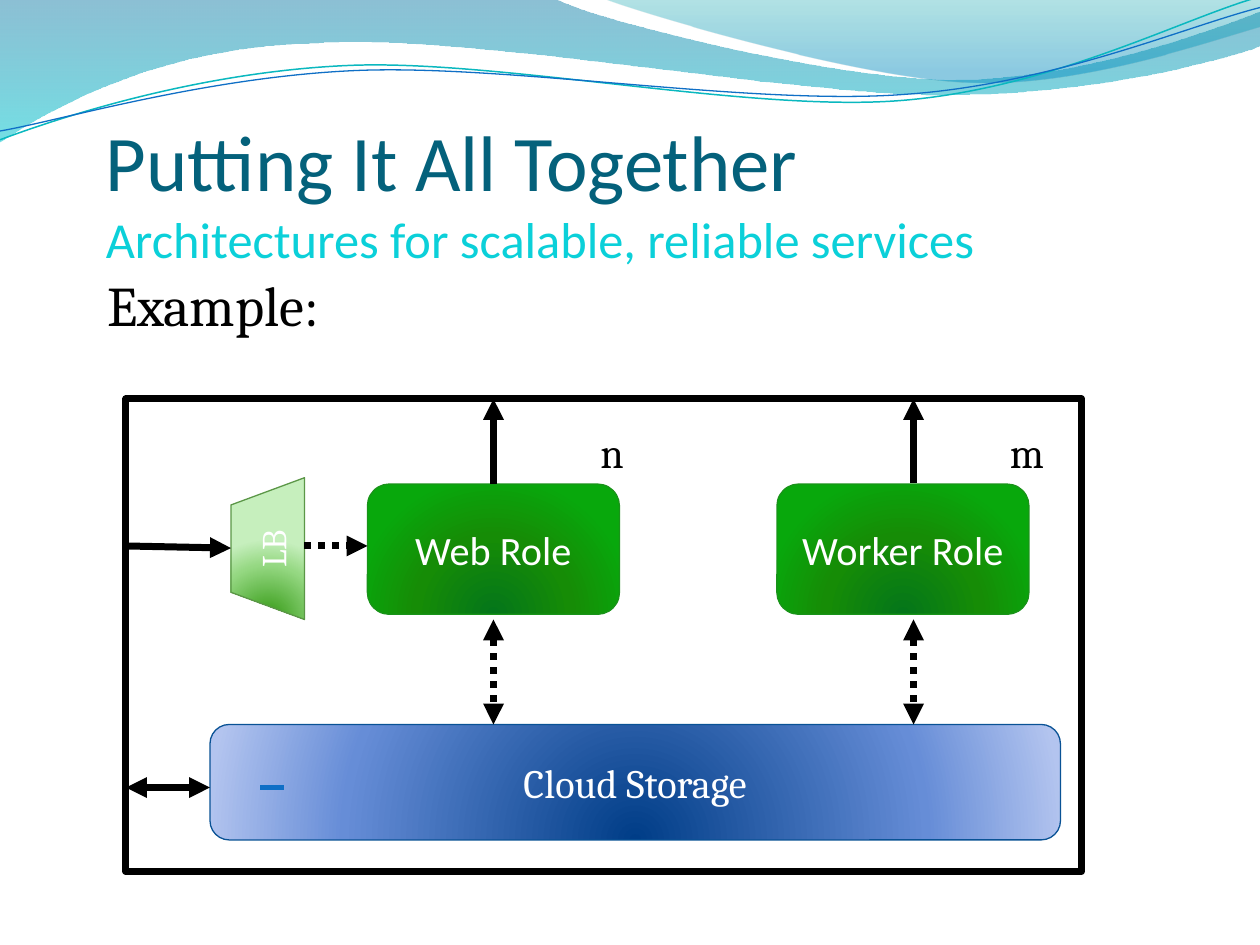
"""Build the slide on an architecture for scalable, reliable cloud services."""
from dataclasses import dataclass
from typing import Optional

import lxml.etree
import pptx
import pptx.dml.color
import pptx.enum.dml
import pptx.enum.shapes
import pptx.enum.text
import pptx.oxml
import pptx.oxml.ns
import pptx.util

Shape = pptx.enum.shapes.MSO_SHAPE
Align = pptx.enum.text.PP_ALIGN
Anchor = pptx.enum.text.MSO_ANCHOR
qn = pptx.oxml.ns.qn

COLUMNS, ROWS = 120, 90
CELL = pptx.util.Inches(10) // COLUMNS
PERCENT = pptx.util.Inches(10) // 100
COLORS = {
    "title": "04617B", "subtitle": "0BD0D9", "black": "000000", "white": "FFFFFF",
    "teal line": "0AB8BF", "blue line": "0F6FC6",
    "storage line": "095295", "role line": "199319", "balancer line": "5B9747",
}
GRADIENTS = {
    "storage": [(0, "003D87", 100), (68, "668DD7", 100), (100, "B3C4EF", 100)],
    "role": [(0, "04761A", 100), (55, "168C06", 100), (100, "08A80C", 100)],
    "balancer": [(0, "319811", 100), (68, "95D882", 100), (100, "C6EFBD", 100)],
    "wide wave": [(0, "0074A1", 45), (100, "00C6CF", 55)],
    "right wave": [(0, "00A1A9", 30), (80, "008BBF", 45)],
}
DOWNWARD = '<a:lin ang="5400000" scaled="0"/>'
FROM_BELOW = ('<a:path path="circle"><a:fillToRect l="50000" t="130000" '
              'r="50000" b="-30000"/></a:path>')


@dataclass
class Block:
    """A labelled block, placed in grid cells."""
    text: str
    kind: str
    preset: Shape
    place: tuple
    font: str = "Cambria"
    size: float = 23
    turn: float = 0


@dataclass
class Arrow:
    """A line between two grid points, with optional heads and a join at its end."""
    start: tuple
    end: tuple
    head: bool = False
    tail: bool = False
    dotted: bool = False
    color: str = "black"
    width: float = 4
    joint: Optional[tuple] = None


@dataclass
class Wave:
    """An outline of straight and cubic steps, in percent of the slide width."""
    start: tuple
    steps: list
    gradient: str = ""
    color: str = ""
    width: float = 0.75


WAVES = [
    Wave((0, 0), [[(44, -0.1)], [(47.6, 1.7), (66.4, 6.3), (75.8, 6.3)],
                  [(85.3, 6.3), (95.8, 2.6), (100, 0.9)], [(100.1, 3.6)],
                  [(98.3, 4.4), (87, 7.6), (74.6, 7.5)],
                  [(62.2, 7.5), (38.2, 2.8), (25.7, 3.4)],
                  [(12.9, 3.6), (4.6, 8.3), (-0.1, 11.3)]], gradient="wide wave"),
    Wave((47.9, -0.1), [[(50.9, 1.1), (68.2, 6.2), (76.9, 6.5)],
                        [(85.6, 6.9), (96.1, 3.2), (100, 2.1)], [(100, 0)]],
         gradient="right wave"),
    Wave((0, 11.1), [[(4.8, 9.3), (15.8, 5.7), (27.7, 5.2)],
                     [(39.5, 4.7), (59.3, 8.9), (71.3, 8)],
                     [(83.3, 7.1), (93.8, 1.5), (99.8, -0.2)]], color="teal line", width=0.85),
    Wave((0, 10.4), [[(4.7, 9.6), (16.4, 6.1), (28.3, 5.6)],
                     [(40.3, 5.1), (59.7, 8.4), (71.7, 7.5)],
                     [(83.6, 6.7), (94.1, 2.1), (100, 0.6)]], color="blue line"),
]
BLOCKS = [
    Block("Cloud Storage", "storage", Shape.ROUNDED_RECTANGLE, (20, 69, 81, 11)),
    Block("Web Role", "role", Shape.ROUNDED_RECTANGLE, (35, 46.1, 24, 12.4), "Calibri"),
    Block("LB", "balancer", Shape.TRAPEZOID, (18.75, 48.75, 13.5, 7), size=20, turn=270),
    Block("Worker Role", "role", Shape.ROUNDED_RECTANGLE, (74, 46.1, 24, 12.4), "Calibri"),
]
COUNTS = {"n": (56, 40, 4, 6), "m": (95, 40, 4, 6)}
ROLE_COLUMNS = (47, 87)
ARROWS = [
    Arrow((24.8, 75), (27, 75), color="blue line", width=3),
    Arrow((29, 52), (35, 52), tail=True, dotted=True),
    Arrow((20, 75), (12, 75), head=True, tail=True),
    Arrow((22, 52.2), (12, 52), head=True),
    *[Arrow((column, 59), (column, 69), head=True, tail=True, dotted=True)
      for column in ROLE_COLUMNS],
    Arrow((47, 38), (47, 46), head=True, joint=("Web Role", 0)),
    Arrow((87, 38), (87, 46), head=True),
]


def cells(values: tuple) -> list:
    """Turn grid cells into lengths."""
    return [pptx.util.Emu(round(value * CELL)) for value in values]


def rgb(name: str) -> pptx.dml.color.RGBColor:
    """Look up a named colour."""
    return pptx.dml.color.RGBColor.from_string(COLORS[name])


def style_font(font, name: str, size: float, color: str) -> None:
    """Set the typeface, size and colour of a font."""
    font.name, font.size = name, pptx.util.Pt(size)
    font.color.rgb = rgb(color)


def style_line(line, color: str, width: float) -> None:
    """Set the colour and width of a line."""
    line.color.rgb = rgb(color)
    line.width = pptx.util.Pt(width)


def fill_gradient(shape, name: str, direction: str) -> None:
    """Fill a shape with a named gradient."""
    shape.fill.gradient()
    stops = "".join(
        f'<a:gs pos="{place * 1000}"><a:srgbClr val="{color}">'
        f'<a:alpha val="{alpha * 1000}"/></a:srgbClr></a:gs>'
        for place, color, alpha in GRADIENTS[name])
    gradient = pptx.oxml.parse_xml(
        f'<a:gradFill {pptx.oxml.ns.nsdecls("a")} rotWithShape="0">'
        f'<a:gsLst>{stops}</a:gsLst>{direction}</a:gradFill>')
    properties = shape._element.spPr
    properties.replace(properties.find(qn("a:gradFill")), gradient)


def bend_steps(shape, steps: list) -> None:
    """Turn each three-point step of an outline into one cubic curve."""
    segments = iter(list(shape._element.iter(qn("a:lnTo"))))
    for step in steps:
        first, *others = [next(segments) for _ in step]
        if others:
            curve = lxml.etree.Element(qn("a:cubicBezTo"))
            first.addprevious(curve)
            for segment in (first, *others):
                curve.append(segment[0])
                segment.getparent().remove(segment)


def draw_wave(page, wave: Wave) -> None:
    """Draw one wave of the header."""
    points = [wave.start, *(point for step in wave.steps for point in step)]
    (left, top), *others = [(round(x * PERCENT), round(y * PERCENT)) for x, y in points]
    builder = page.shapes.build_freeform(left, top, scale=1.0)
    builder.add_line_segments(others, close=bool(wave.gradient))
    shape = builder.convert_to_shape()
    bend_steps(shape, wave.steps)
    shape.shadow.inherit = False
    if wave.gradient:
        fill_gradient(shape, wave.gradient, DOWNWARD)
        shape.line.fill.background()
    else:
        shape.fill.background()
        style_line(shape.line, wave.color, wave.width)


def draw_block(page, block: Block):
    """Draw a block with its centred label."""
    shape = page.shapes.add_shape(block.preset, *cells(block.place))
    shape.shadow.inherit = False
    shape.rotation = block.turn
    if block.preset == Shape.TRAPEZOID:
        shape.adjustments[0] = 0.37
    fill_gradient(shape, block.kind, FROM_BELOW)
    style_line(shape.line, f"{block.kind} line", 0.75)
    shape.text_frame.vertical_anchor = Anchor.MIDDLE
    para = shape.text_frame.paragraphs[0]
    para.text, para.alignment = block.text, Align.CENTER
    style_font(para.font, block.font, block.size, "white")
    return shape


def draw_arrow(page, arrow: Arrow, blocks: dict) -> None:
    """Draw an arrow and join it to its block."""
    straight = pptx.enum.shapes.MSO_CONNECTOR.STRAIGHT
    link = page.shapes.add_connector(straight, *cells(arrow.start + arrow.end))
    if arrow.joint:
        name, side = arrow.joint
        link.end_connect(blocks[name], side)
    style_line(link.line, arrow.color, arrow.width)
    if arrow.dotted:
        link.line.dash_style = pptx.enum.dml.MSO_LINE.ROUND_DOT
    for wanted, tag in ((arrow.head, "a:headEnd"), (arrow.tail, "a:tailEnd")):
        if wanted:
            lxml.etree.SubElement(link.line._get_or_add_ln(), qn(tag), type="triangle")
    lxml.etree.SubElement(link._element.spPr, qn("a:effectLst"))


def place_text(box, place: tuple, anchor) -> None:
    """Move a text box or placeholder and bring it to the front."""
    box.left, box.top, box.width, box.height = cells(place)
    frame = box.text_frame
    frame.word_wrap, frame.vertical_anchor = True, anchor
    frame.auto_size = pptx.enum.text.MSO_AUTO_SIZE.NONE
    box._element.getparent().append(box._element)


def write_headings(page) -> None:
    """Fill the title and body placeholders."""
    title, body = page.shapes.title, page.placeholders[1]
    place_text(title, (10.08, 11, 109.92, 14.55), Anchor.BOTTOM)
    frame = title.text_frame
    frame.margin_left = frame.margin_right = frame.margin_bottom = 0
    para = frame.paragraphs[0]
    para.alignment = Align.LEFT
    for text, size, color in (("Putting It All Together", 45, "title"),
                              ("Architectures for scalable, reliable services", 28.8, "subtitle")):
        if para.runs:
            para.add_line_break()
        span = para.add_run()
        span.text = text
        style_font(span.font, "Calibri", size, color)
    place_text(body, (9, 26.5, 105.5, 63.5), Anchor.TOP)
    para = body.text_frame.paragraphs[0]
    para.text, para.line_spacing = "Example:", 0.78
    para.space_before, para.space_after = pptx.util.Pt(6), pptx.util.Pt(8)
    style_font(para.font, "Cambria", 32, "black")
    properties = para._p.get_or_add_pPr()
    properties.set("marL", "393192")
    properties.set("indent", "-393192")
    properties.insert_element_before(
        pptx.oxml.parse_xml(f'<a:buNone {pptx.oxml.ns.nsdecls("a")}/>'), "a:defRPr")


def main() -> None:
    """Build and save the deck."""
    deck = pptx.Presentation()
    deck.slide_width, deck.slide_height = COLUMNS * CELL, ROWS * CELL
    page = deck.slides.add_slide(deck.slide_layouts[1])
    for wave in WAVES:
        draw_wave(page, wave)
    write_headings(page)
    blocks = {block.text: draw_block(page, block) for block in BLOCKS}
    for text, place in COUNTS.items():
        box = page.shapes.add_textbox(*cells(place))
        place_text(box, place, Anchor.TOP)
        para = box.text_frame.paragraphs[0]
        para.text = text
        style_font(para.font, "Cambria", 24, "black")
    frame = page.shapes.add_shape(Shape.RECTANGLE, *cells((12, 38, 91, 45)))
    frame.shadow.inherit = False
    frame.fill.background()
    style_line(frame.line, "black", 4)
    for arrow in ARROWS:
        draw_arrow(page, arrow, blocks)
    deck.save("out.pptx")


if __name__ == "__main__":
    main()
